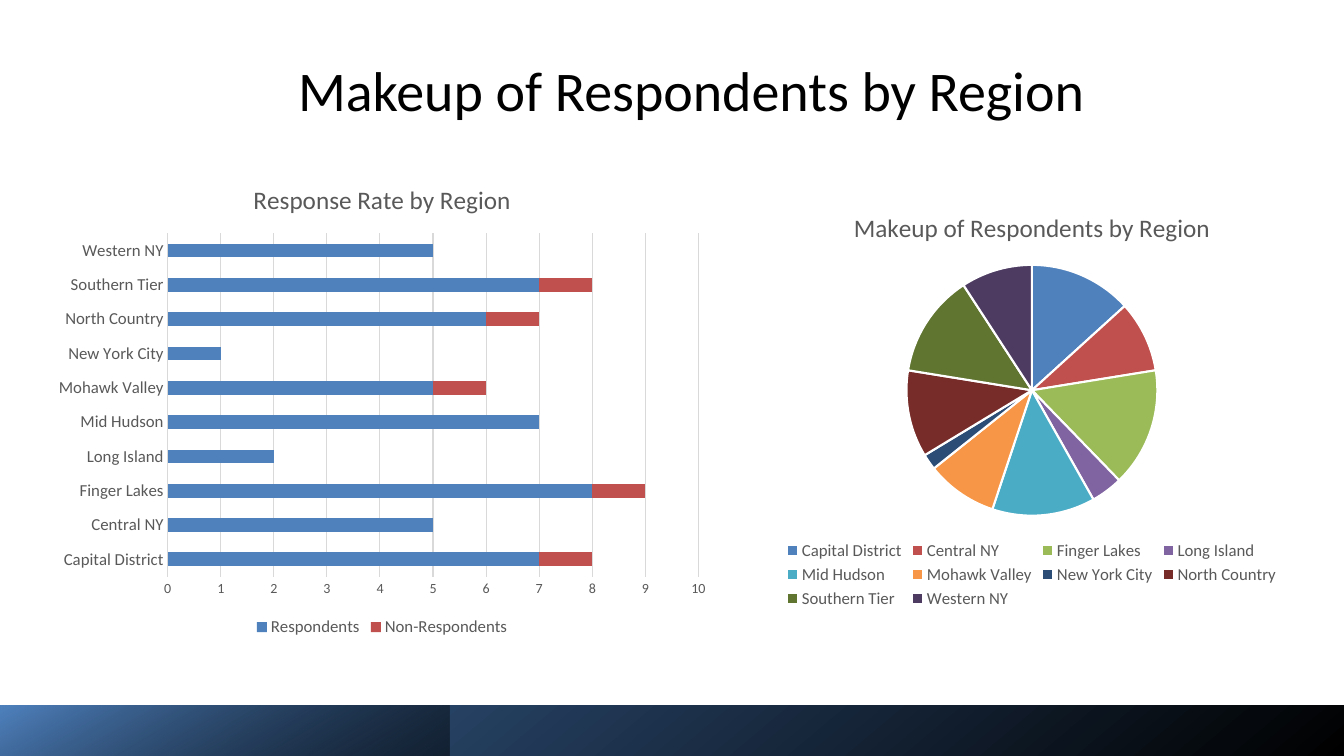
from dataclasses import dataclass
from typing import Any

import lxml.etree
import pptx
import pptx.chart.data
import pptx.dml.color
import pptx.enum.chart
import pptx.enum.shapes
import pptx.enum.text
import pptx.oxml.ns
import pptx.util

Inches = pptx.util.Inches
Pt = pptx.util.Pt
ChartType = pptx.enum.chart.XL_CHART_TYPE

FONT = "Calibri"
BLACK, WHITE, GRAY, GRID = "000000", "FFFFFF", "595959", "D9D9D9"
REGIONS = [
    "Capital District", "Central NY", "Finger Lakes", "Long Island", "Mid Hudson",
    "Mohawk Valley", "New York City", "North Country", "Southern Tier", "Western NY",
]
REGION_COLORS = [
    "4F81BD", "C0504D", "9BBB59", "8064A2", "4BACC6",
    "F79646", "2C4D75", "772C2A", "5F7530", "4D3B62",
]


@dataclass
class Box:
    left: float
    top: float
    width: float
    height: float

    def lengths(self) -> list[int]:
        return [Inches(v) for v in (self.left, self.top, self.width, self.height)]


@dataclass
class FooterBand:
    box: Box
    end_color: str
    end_position: float
    angle: float
    start_opacity: int


@dataclass
class RegionChart:
    box: Box
    kind: Any
    title: str
    series: dict[str, list[int]]


FOOTER_BANDS = [
    FooterBand(Box(0, 7, 13.33, 0.51), "376092", 1, 130, 100),
    FooterBand(Box(0, 7, 4.46, 0.51), "4F81BD", 0.99, 120, 46),
]
RESPONSE_RATE = RegionChart(
    Box(0.45, 1.62, 6.68, 4.74), ChartType.BAR_STACKED, "Response Rate by Region",
    {
        "Respondents": [7, 5, 8, 2, 7, 5, 1, 6, 7, 5],
        "Non-Respondents": [1, 0, 1, 0, 0, 1, 0, 1, 1, 0],
    },
)
MAKEUP = RegionChart(
    Box(7.45, 1.9, 5.57, 4.18), ChartType.PIE, "Makeup of Respondents by Region",
    {"Series 1": [13, 9, 15, 4, 13, 9, 2, 11, 13, 9]},
)


def rgb(color: str) -> pptx.dml.color.RGBColor:
    return pptx.dml.color.RGBColor.from_string(color)


def set_all(target: Any, values: dict[str, Any]) -> None:
    for name, value in values.items():
        setattr(target, name, value)


def set_font(font: Any, size: float, color: str) -> None:
    set_all(font, {"name": FONT, "size": Pt(size), "bold": False})
    font.color.rgb = rgb(color)


def set_line(line: Any, color: str, width: float) -> None:
    line.color.rgb = rgb(color)
    line.width = Pt(width)


def set_fill(fill: Any, color: str) -> None:
    fill.solid()
    fill.fore_color.rgb = rgb(color)


def add_heading(slide: Any, box: Box, text: str) -> None:
    frame = slide.shapes.add_textbox(*box.lengths()).text_frame
    set_all(frame, {"word_wrap": True, "vertical_anchor": pptx.enum.text.MSO_ANCHOR.MIDDLE})
    paragraph = frame.paragraphs[0]
    set_all(paragraph, {"text": text, "alignment": pptx.enum.text.PP_ALIGN.CENTER})
    set_font(paragraph.runs[0].font, 40, BLACK)


def add_footer_band(slide: Any, band: FooterBand) -> None:
    shape = slide.shapes.add_shape(
        pptx.enum.shapes.MSO_SHAPE.RECTANGLE, *band.box.lengths())
    shape.shadow.inherit = False
    shape.line.fill.background()
    shape.fill.gradient()
    shape.fill.gradient_angle = band.angle
    start, end = shape.fill.gradient_stops
    start.color.rgb, end.color.rgb = rgb(BLACK), rgb(band.end_color)
    start.position, end.position = 0, band.end_position
    if band.start_opacity < 100:
        qn = pptx.oxml.ns.qn
        start_color = next(shape.fill._xPr.iter(qn("a:srgbClr")))
        alpha = lxml.etree.SubElement(start_color, qn("a:alpha"))
        alpha.set("val", str(band.start_opacity * 1000))


def add_region_chart(slide: Any, spec_chart: RegionChart) -> Any:
    data = pptx.chart.data.CategoryChartData()
    data.categories = REGIONS
    for name, values in spec_chart.series.items():
        data.add_series(name, values)
    chart = slide.shapes.add_chart(
        spec_chart.kind, *spec_chart.box.lengths(), data).chart
    set_font(chart.font, 10, BLACK)
    set_all(chart, {"has_title": True, "has_legend": True})
    title = chart.chart_title
    title.include_in_layout = False
    title.text_frame.text = spec_chart.title
    set_font(title.text_frame.paragraphs[0].runs[0].font, 18, GRAY)
    set_all(chart.legend, {
        "position": pptx.enum.chart.XL_LEGEND_POSITION.BOTTOM,
        "include_in_layout": False,
    })
    set_font(chart.legend.font, 12, GRAY)
    return chart


def style_response_rate(chart: Any) -> None:
    no_tick = pptx.enum.chart.XL_TICK_MARK.NONE
    set_all(chart.plots[0], {"gap_width": 150, "overlap": 100, "vary_by_categories": False})
    for series, color in zip(chart.plots[0].series, REGION_COLORS):
        set_fill(series.format.fill, color)
    regions, counts = chart.category_axis, chart.value_axis
    for axis, size in ((regions, 12), (counts, 10)):
        set_all(axis, {"major_tick_mark": no_tick, "minor_tick_mark": no_tick})
        set_font(axis.tick_labels.font, size, GRAY)
    set_line(regions.format.line, GRID, 0.75)
    set_all(counts, {
        "minimum_scale": 0, "maximum_scale": 10, "major_unit": 1,
        "has_major_gridlines": True,
    })
    counts.format.line.fill.background()
    set_line(counts.major_gridlines.format.line, GRID, 0.75)


def style_makeup(chart: Any) -> None:
    chart.plots[0].vary_by_categories = True
    slices = chart.plots[0].series[0].points
    for index, color in enumerate(REGION_COLORS):
        set_fill(slices[index].format.fill, color)
        set_line(slices[index].format.line, WHITE, 1.5)


def main() -> None:
    deck = pptx.Presentation()
    set_all(deck, {"slide_width": Inches(13.33), "slide_height": Inches(7.5)})
    slide = deck.slides.add_slide(deck.slide_layouts[6])
    add_heading(slide, Box(1.29, 0.28, 11.13, 1.2), "Makeup of Respondents by Region")
    for band in FOOTER_BANDS:
        add_footer_band(slide, band)
    style_response_rate(add_region_chart(slide, RESPONSE_RATE))
    style_makeup(add_region_chart(slide, MAKEUP))
    deck.save("out.pptx")


if __name__ == "__main__":
    main()
